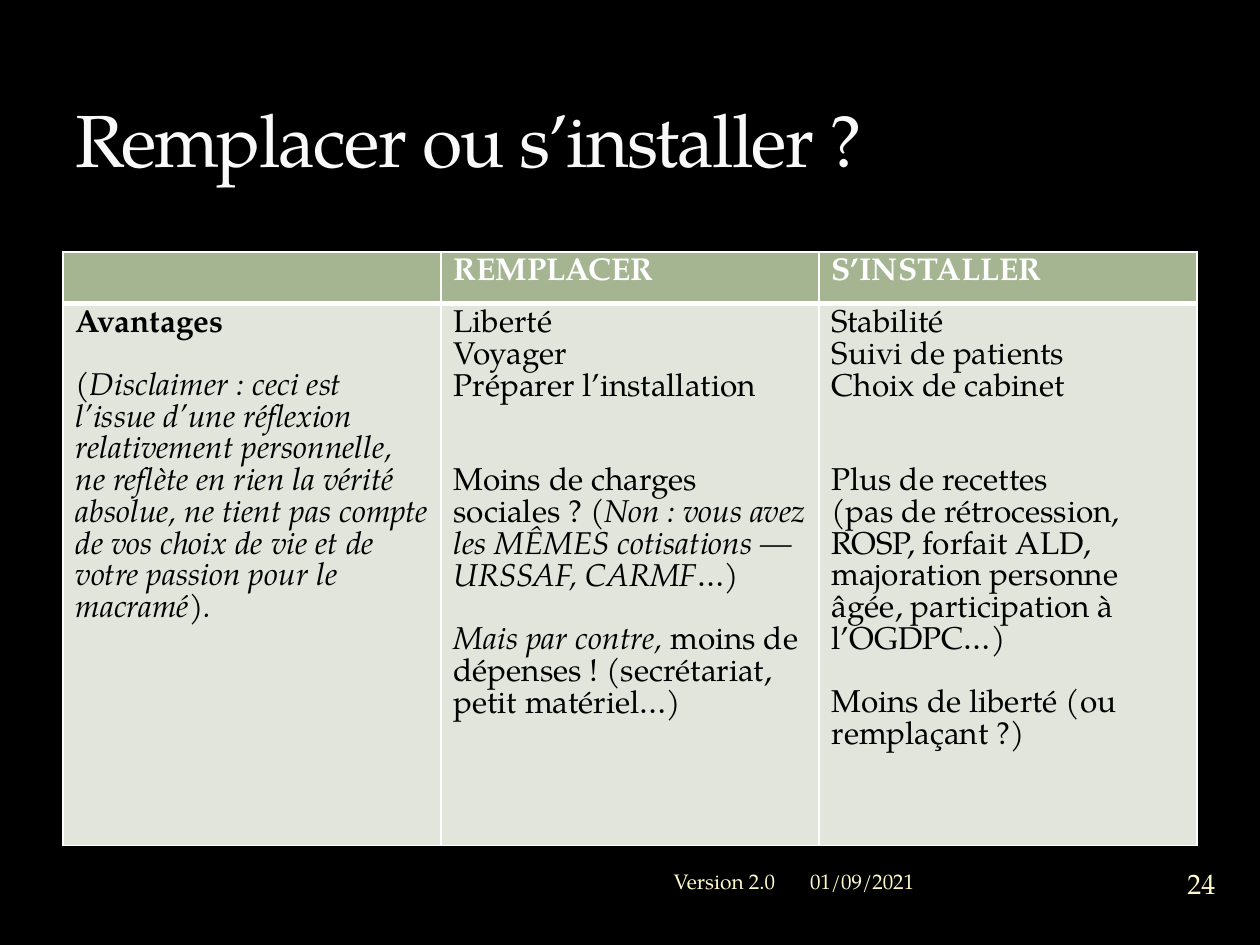
from lxml.etree import SubElement
from pptx import Presentation
from pptx.dml.color import RGBColor
from pptx.enum.text import MSO_ANCHOR, PP_ALIGN
from pptx.oxml.ns import qn
from pptx.util import Cm, Pt

FONT = "TeX Gyre Pagella"
BLACK = RGBColor(0x00, 0x00, 0x00)
WHITE = RGBColor(0xFF, 0xFF, 0xFF)
TITLE_WHITE = RGBColor(0xF9, 0xF9, 0xF9)
CREAM = RGBColor(0xFE, 0xFA, 0xC9)
GREEN = RGBColor(0xA5, 0xB5, 0x92)
PALE_GREEN = RGBColor(0xE1, 0xE5, 0xDC)

TITLE = "Remplacer ou s’installer ?"
HEADINGS = ["", "REMPLACER", "S’INSTALLER"]
# PLACEHOLDER
ARGUMENTS = [
    [
        (0, [("Avantages", "b")]),
        (1, [("(Disclaimer : ceci est l’issue d’une réflexion relativement personnelle, "
              "ne reflète en rien la vérité absolue, ne tient pas compte de vos choix "
              "de vie et de votre passion pour le macramé).", "i")]),
    ],
    [
        (0, [("Liberté", "")]),
        (0, [("Voyager", "")]),
        (0, [("Préparer l’installation", "")]),
        (2, [("Moins de charges sociales ?", ""),
             (" (Non : vous avez les MÊMES cotisations — URSSAF, CARMF…)", "i")]),
        (1, [("Mais par contre, ", "i"),
             ("moins de dépenses ! (secrétariat, petit matériel…)", "")]),
    ],
    [
        (0, [("Stabilité", "")]),
        (0, [("Suivi de patients", "")]),
        (0, [("Choix de cabinet", "")]),
        (2, [("Plus de recettes", "")]),
        (0, [("(pas de rétrocession, ROSP, forfait ALD, majoration personne âgée, "
              "participation à l’OGDPC…)", "")]),
        (1, [("Moins de liberté (ou remplaçant ?)", "")]),
    ],
]
FOOTERS = [
    ("01/09/2021", (16.08, 17.22, 7.19, 1.07), 12, PP_ALIGN.LEFT, 0.25),
    ("24", (23.37, 17.17, 1.7, 1.27), 16, PP_ALIGN.CENTER, 0),
    ("Version 2.0", (5.92, 17.22, 9.96, 1.07), 12, PP_ALIGN.RIGHT, 0.25),
]
LINE = Pt(18)


def set_font(font, size, color):
    font.name = FONT
    font.size = Pt(size)
    font.color.rgb = color


def set_borders(cell, top, bottom):
    properties = cell._tc.get_or_add_tcPr()
    widths = {"a:lnL": 1, "a:lnR": 1, "a:lnT": top, "a:lnB": bottom}
    for tag, width in widths.items():
        line = SubElement(properties, qn(tag), w=str(Pt(width)))
        fill = SubElement(line, qn("a:solidFill"))
        SubElement(fill, qn("a:srgbClr"), val=str(WHITE))


def fill_cell(cell, paragraphs, text_color, background, top, bottom):
    set_borders(cell, top, bottom)
    cell.fill.solid()
    cell.fill.fore_color.rgb = background
    frame = cell.text_frame
    for index, (blank_lines, spans) in enumerate(paragraphs):
        para = frame.add_paragraph() if index else frame.paragraphs[0]
        if blank_lines:
            para.space_before = blank_lines * LINE
        set_font(para.font, 18, text_color)
        for text, style in spans:
            span = para.add_run()
            span.text = text
            set_font(span.font, 18, text_color)
            span.font.bold = style == "b"
            span.font.italic = style == "i"


def add_title(page):
    title = page.shapes.title
    title.left, title.top, title.width, title.height = Cm(1.27), Cm(0.43), Cm(22.86), Cm(3.38)
    title.text_frame.text = TITLE
    title.text_frame.vertical_anchor = MSO_ANCHOR.BOTTOM
    para = title.text_frame.paragraphs[0]
    para.alignment = PP_ALIGN.LEFT
    set_font(para.font, 42, TITLE_WHITE)
    para.runs[0].font._element.set("spc", "-100")


def add_comparison(page):
    table = page.shapes.add_table(2, 3, Cm(1.27), Cm(5.08), Cm(22.86), Cm(11.96)).table
    table.rows[0].height, table.rows[1].height = Cm(1.04), Cm(10.92)
    for column, (heading, arguments) in enumerate(zip(HEADINGS, ARGUMENTS)):
        table.columns[column].width = Cm(7.62)
        spans = [(heading, "b")] if heading else []
        fill_cell(table.cell(0, column), [(0, spans)], WHITE, GREEN, 1, 3)
        fill_cell(table.cell(1, column), arguments, BLACK, PALE_GREEN, 3, 1)


def add_footer(page, text, place, size, alignment, side_margin):
    box = page.shapes.add_textbox(*map(Cm, place))
    frame = box.text_frame
    frame.word_wrap = True
    frame.vertical_anchor = MSO_ANCHOR.MIDDLE
    frame.margin_left = frame.margin_right = Cm(side_margin)
    frame.margin_top = frame.margin_bottom = Cm(side_margin / 2)
    frame.text = text
    para = frame.paragraphs[0]
    para.alignment = alignment
    set_font(para.font, size, CREAM)


def main():
    deck = Presentation()
    deck.slide_width, deck.slide_height = Cm(25.4), Cm(19.05)
    page = deck.slides.add_slide(deck.slide_layouts[5])
    page.background.fill.solid()
    page.background.fill.fore_color.rgb = BLACK
    add_title(page)
    add_comparison(page)
    for footer in FOOTERS:
        add_footer(page, *footer)
    deck.save("out.pptx")


if __name__ == "__main__":
    main()
